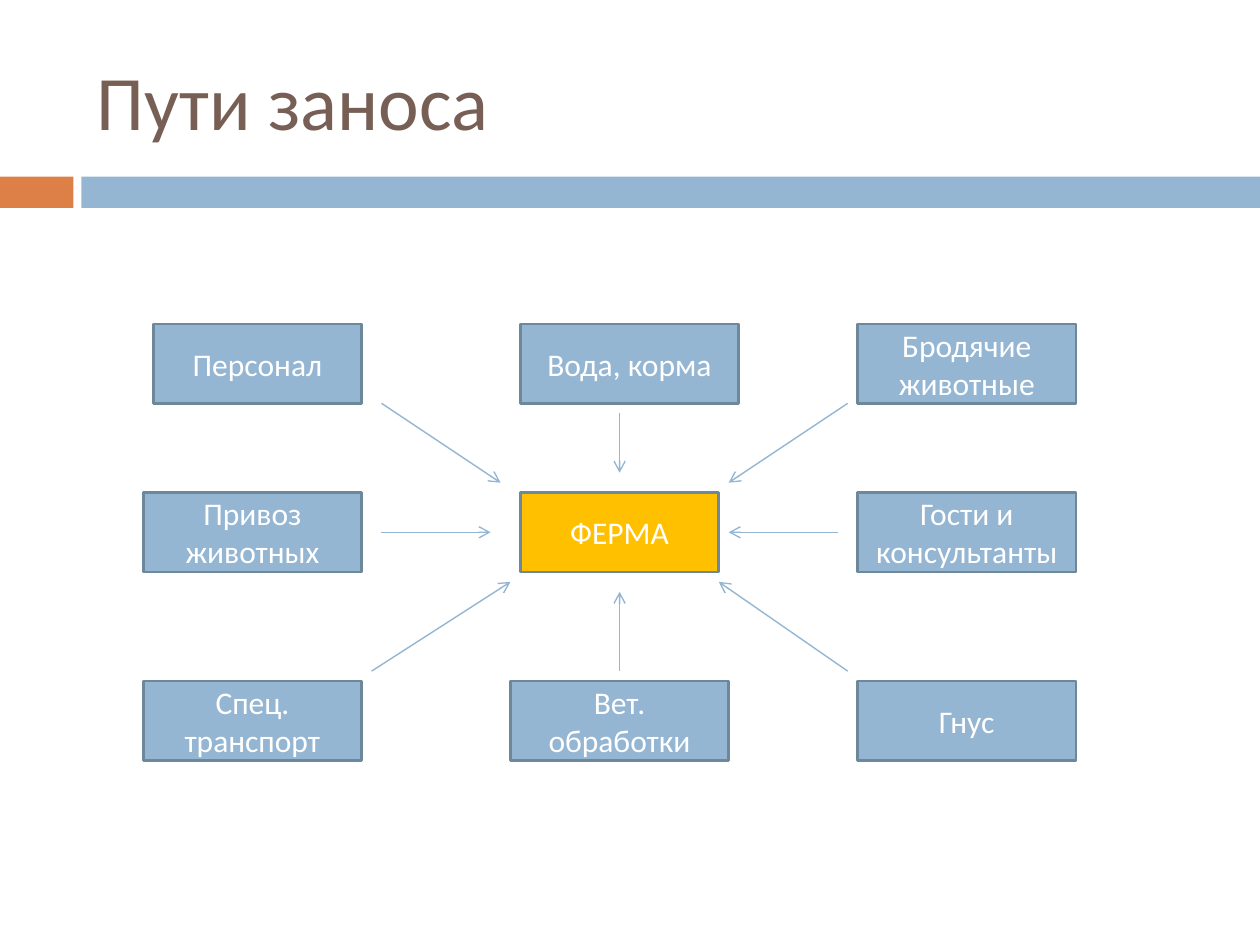
from lxml import etree
from pptx import Presentation
from pptx.dml.color import RGBColor
from pptx.enum.shapes import MSO_CONNECTOR as CONNECTOR, MSO_SHAPE as SHAPE
from pptx.enum.text import MSO_ANCHOR as ANCHOR, PP_ALIGN as ALIGN
from pptx.oxml.ns import qn
from pptx.util import Cm, Pt

ORANGE = RGBColor(0xDD, 0x80, 0x47)
BLUE = RGBColor(0x94, 0xB6, 0xD2)
DARK_BLUE = RGBColor(0x6D, 0x87, 0x9B)
BROWN = RGBColor(0x77, 0x5F, 0x55)
YELLOW = RGBColor(0xFF, 0xC0, 0x00)
WHITE = RGBColor(0xFF, 0xFF, 0xFF)

BOX_HEIGHT = 1.6
TOP_ROW, MIDDLE_ROW, BOTTOM_ROW = 0, 3.4, 7.2

# Label, left, top, width, fill; in cm from the diagram's corner
BOXES = [
    ("Персонал", 0.2, TOP_ROW, 4.2, BLUE),
    ("Вода, корма", 7.6, TOP_ROW, 4.4, BLUE),
    ("Бродячие животные", 14.4, TOP_ROW, 4.4, BLUE),
    ("Привоз животных", 0, MIDDLE_ROW, 4.4, BLUE),
    ("ФЕРМА", 7.6, MIDDLE_ROW, 4, YELLOW),
    ("Гости и консультанты", 14.4, MIDDLE_ROW, 4.4, BLUE),
    ("Спец. транспорт", 0, BOTTOM_ROW, 4.4, BLUE),
    ("Вет. обработки", 7.4, BOTTOM_ROW, 4.4, BLUE),
    ("Гнус", 14.4, BOTTOM_ROW, 4.4, BLUE),
]

# Start x, y and end x, y; every arrow points at the farm
ARROWS = [
    (4.8, 1.6, 7.2, 3.2),
    (9.6, 1.8, 9.6, 3),
    (14.2, 1.6, 11.8, 3.2),
    (4.8, 4.2, 7, 4.2),
    (14, 4.2, 11.8, 4.2),
    (4.6, 7, 7.4, 5.2),
    (9.6, 7, 9.6, 5.4),
    (14.2, 7, 11.6, 5.2),
]


def write(shape, text, *, size, color, align=ALIGN.LEFT):
    frame = shape.text_frame
    frame.word_wrap = True
    frame.vertical_anchor = ANCHOR.MIDDLE
    para = frame.paragraphs[0]
    para.alignment = align
    span = para.add_run()
    span.text = text
    span.font.name = "Calibri"
    span.font.size = Pt(size)
    span.font.color.rgb = color


def add_box(page, left, top, width, height, fill, border=None):
    box = page.shapes.add_shape(SHAPE.RECTANGLE, Cm(left), Cm(top), Cm(width), Cm(height))
    box.shadow.inherit = False
    box.fill.solid()
    box.fill.fore_color.rgb = fill
    if border is None:
        box.line.fill.background()
    else:
        box.line.color.rgb = border
        box.line.width = Pt(1.5)
    return box


def add_arrow(page, start_x, start_y, end_x, end_y):
    arrow = page.shapes.add_connector(
        CONNECTOR.STRAIGHT, Cm(start_x), Cm(start_y), Cm(end_x), Cm(end_y))
    arrow.line.color.rgb = BLUE
    arrow.line.width = Pt(0.79)
    etree.SubElement(arrow.line._get_or_add_ln(), qn("a:tailEnd"), type="arrow")
    etree.SubElement(arrow._element.spPr, qn("a:effectLst"))


def place_title(page, left, top, width, height):
    title = page.shapes.title
    title.left, title.top = Cm(left), Cm(top)
    title.width, title.height = Cm(width), Cm(height)
    write(title, "Пути заноса", size=44, color=BROWN)


def place_band(page, left, top, width, height):
    tab, gap = 1.48, 0.16
    add_box(page, left, top, tab, height, ORANGE)
    add_box(page, left + tab + gap, top, width - tab - gap, height, BLUE)


def place_diagram(page, left, top):
    # Sources around the farm
    for label, x, y, width, fill in BOXES:
        box = add_box(page, left + x, top + y, width, BOX_HEIGHT, fill, DARK_BLUE)
        write(box, label, size=18, color=WHITE, align=ALIGN.CENTER)
    # Arrows, which stop short of the boxes
    for start_x, start_y, end_x, end_y in ARROWS:
        add_arrow(page, left + start_x, top + start_y, left + end_x, top + end_y)


def main():
    deck = Presentation()
    deck.slide_width, deck.slide_height = Cm(25.4), Cm(19.05)
    page = deck.slides.add_slide(deck.slide_layouts[5])
    place_band(page, 0, 3.56, 25.4, 0.63)
    place_title(page, 1.7, 0.64, 22.66, 2.74)
    place_diagram(page, 2.89, 6.53)
    deck.save("out.pptx")


if __name__ == "__main__":
    main()
